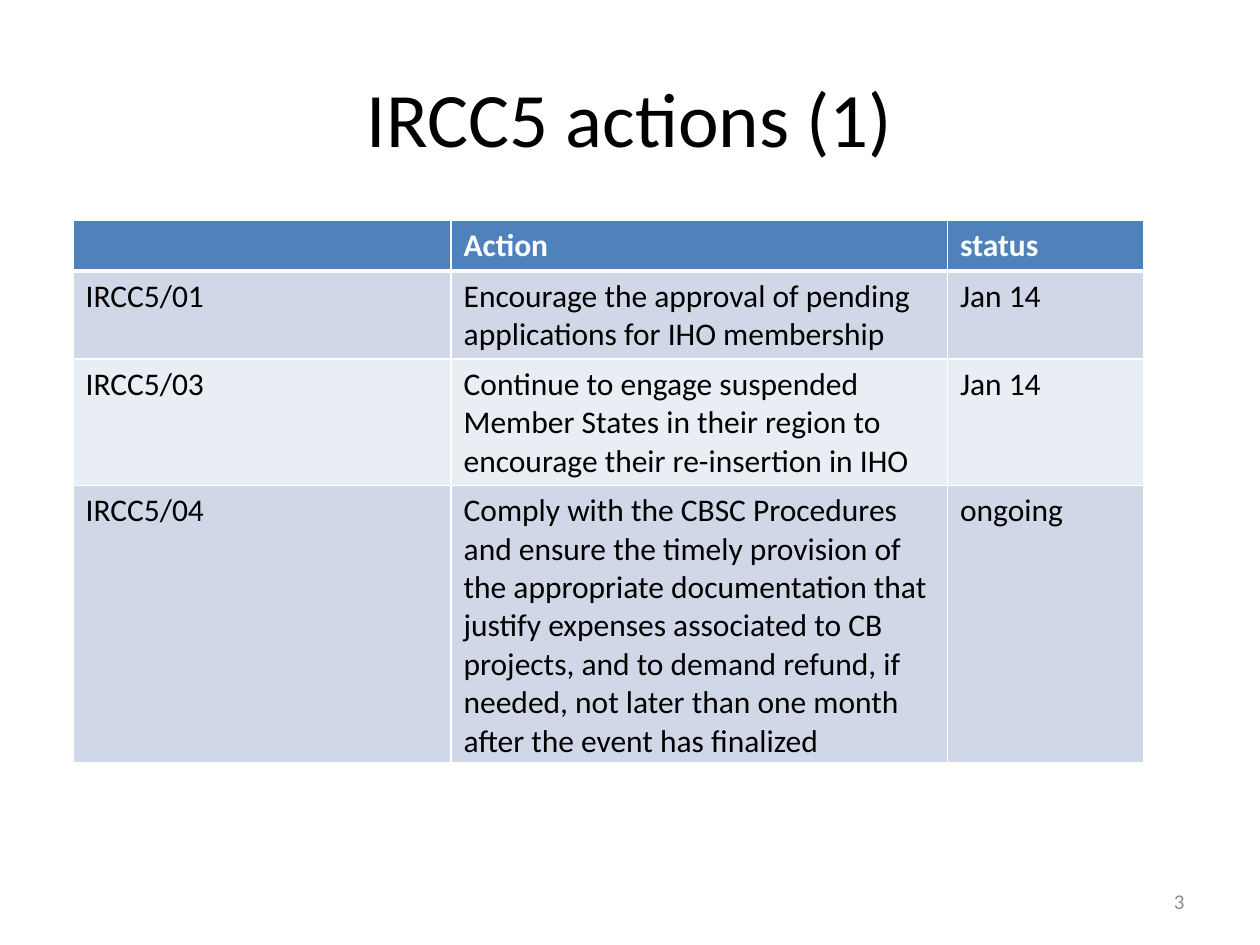
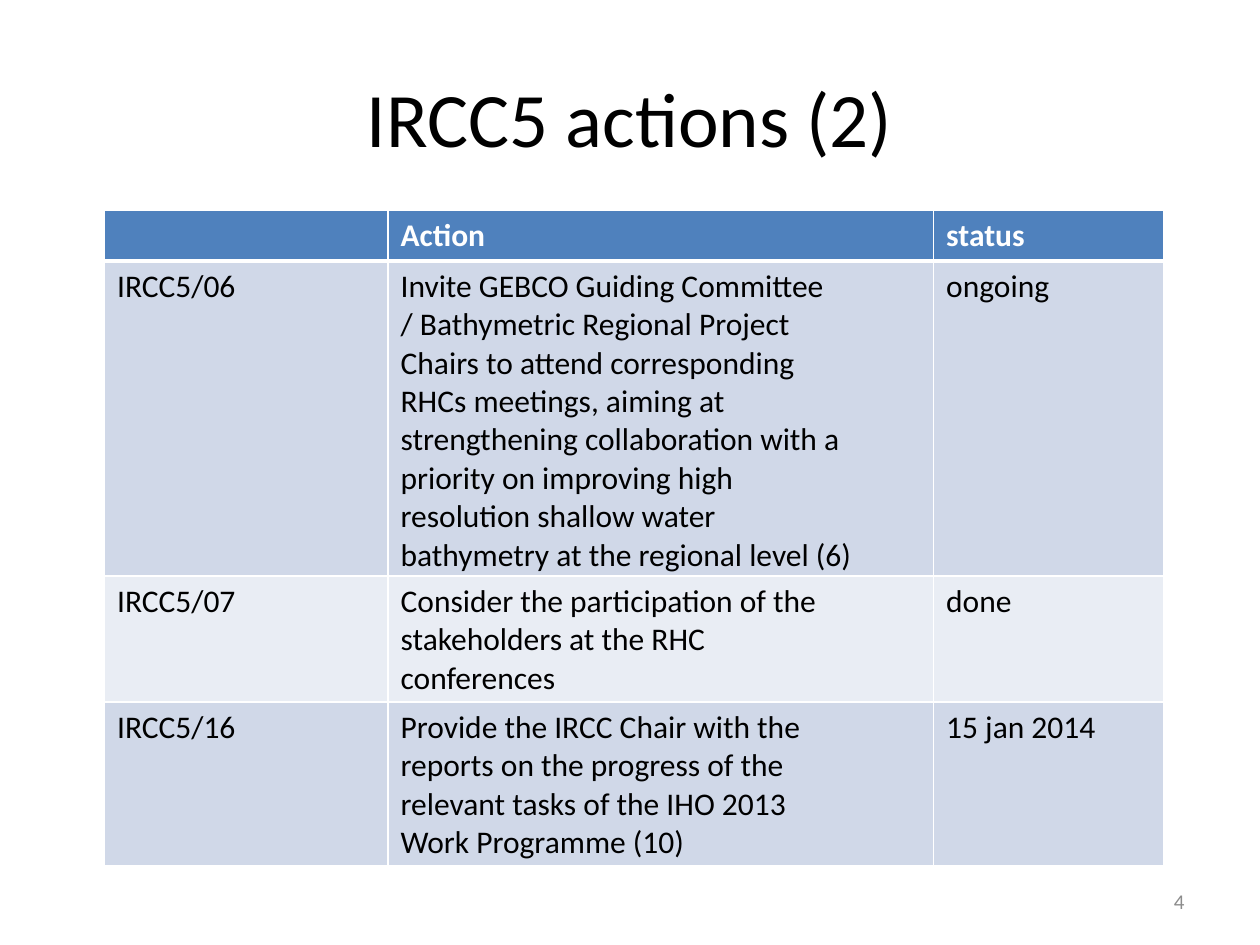
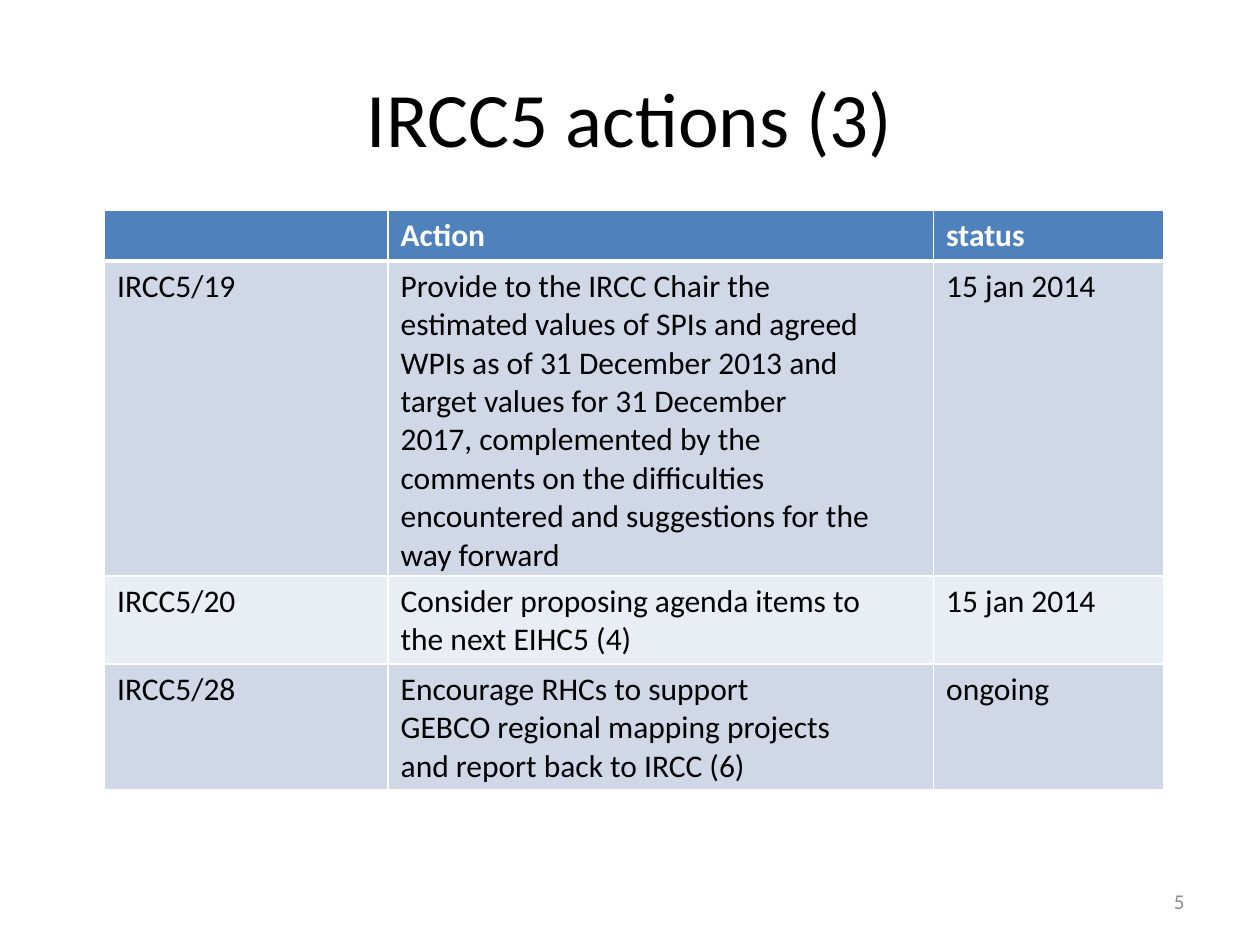
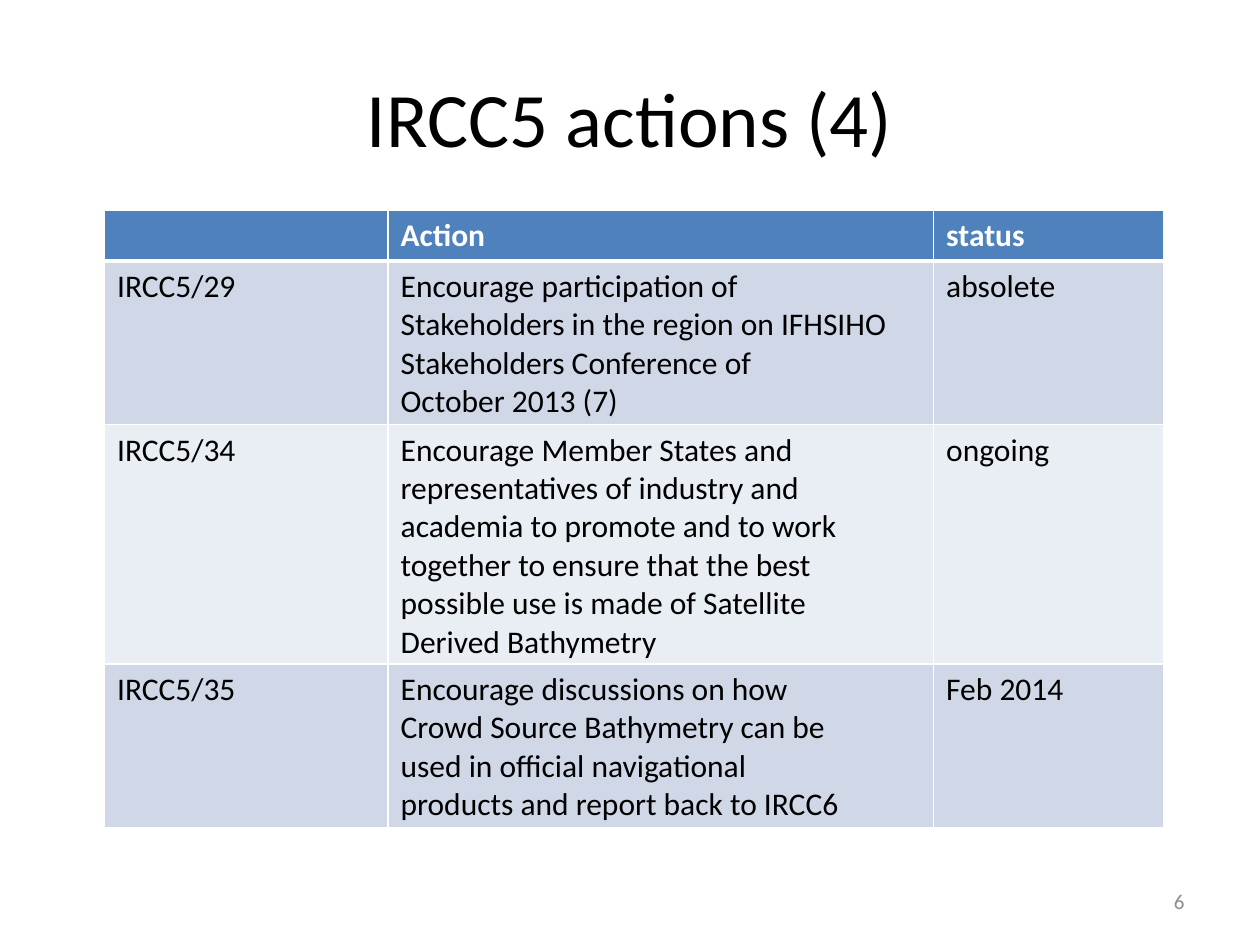
"""Build four slides that list the IRCC5 actions and their status."""
from lxml.etree import SubElement as Sub
from pptx import Presentation
from pptx.dml.color import RGBColor as RGB
from pptx.enum.text import MSO_ANCHOR as Anchor, PP_ALIGN as Align
from pptx.oxml.ns import qn
from pptx.util import Inches, Pt

FONT = "Calibri"
BLACK = RGB(0x00, 0x00, 0x00)
WHITE = RGB(0xFF, 0xFF, 0xFF)
GREY = RGB(0x8C, 0x8C, 0x8C)
BLUE = RGB(0x4F, 0x81, 0xBD)
BANDS = RGB(0xE9, 0xED, 0xF4), RGB(0xD0, 0xD8, 0xE8)

WIDE, HIGH = 10, 7.5
MARGIN = 0.05 * WIDE
PAD, LINE = 0.1, 0.3
FIRST = 3

HEAD = ("", "Action", "status")
NARROW = {"left": 0.58, "top": 1.75, "cols": (3, 3.94, 1.56)}
BROAD = {"left": 0.83, "top": 1.67, "cols": (2.25, 4.33, 1.83)}

PAGES = [
    (NARROW, [
        ("IRCC5/01", """Encourage the approval of pending
applications for IHO membership""", "Jan 14"),
        ("IRCC5/03", """Continue to engage suspended
Member States in their region to
encourage their re-insertion in IHO""", "Jan 14"),
        ("IRCC5/04", """Comply with the CBSC Procedures
and ensure the timely provision of
the appropriate documentation that
justify expenses associated to CB
projects, and to demand refund, if
needed, not later than one month
after the event has finalized""", "ongoing"),
    ]),
    (BROAD, [
        ("IRCC5/06", """Invite GEBCO Guiding Committee
/ Bathymetric Regional Project
Chairs to attend corresponding
RHCs meetings, aiming at
strengthening collaboration with a
priority on improving high
resolution shallow water
bathymetry at the regional level (6)""", "ongoing"),
        ("IRCC5/07", """Consider the participation of the
stakeholders at the RHC
conferences""", "done"),
        ("IRCC5/16", """Provide the IRCC Chair with the
reports on the progress of the
relevant tasks of the IHO 2013
Work Programme (10)""", "15 jan 2014"),
    ]),
    (BROAD, [
        ("IRCC5/19", """Provide to the IRCC Chair the
estimated values of SPIs and agreed
WPIs as of 31 December 2013 and
target values for 31 December
2017, complemented by the
comments on the difficulties
encountered and suggestions for the
way forward""", "15 jan 2014"),
        ("IRCC5/20", """Consider proposing agenda items to
the next EIHC5 (4)""", "15 jan 2014"),
        ("IRCC5/28", """Encourage RHCs to support
GEBCO regional mapping projects
and report back to IRCC (6)""", "ongoing"),
    ]),
    (BROAD, [
        ("IRCC5/29", """Encourage participation of
Stakeholders in the region on IFHSIHO
Stakeholders Conference of
October 2013 (7)""", "absolete"),
        ("IRCC5/34", """Encourage Member States and
representatives of industry and
academia to promote and to work
together to ensure that the best
possible use is made of Satellite
Derived Bathymetry""", "ongoing"),
        ("IRCC5/35", """Encourage discussions on how
Crowd Source Bathymetry can be
used in official navigational
products and report back to IRCC6""", "Feb 2014"),
    ]),
]


def write(frame, text, size=18, color=BLACK, bold=False, align=Align.LEFT):
    """Fill a text frame, one paragraph for each line."""
    frame.word_wrap = True
    frame.text = text
    for par in frame.paragraphs:
        par.alignment = align
        font = par.font
        for run in par.runs:
            font = run.font
            font.color.rgb = color
        font.name, font.size, font.bold = FONT, Pt(size), bold


def label(slide, text, left, top, width, height, **look):
    """Add a text box with its text in the middle."""
    box = slide.shapes.add_textbox(*map(Inches, (left, top, width, height)))
    box.text_frame.vertical_anchor = Anchor.MIDDLE
    write(box.text_frame, text, **look)


def edge(cell, **widths):
    """Draw white borders on a cell, widths in points."""
    props = cell._tc.get_or_add_tcPr()
    for side, width in widths.items():
        line = Sub(props, qn(f"a:ln{side}"), w=str(Pt(width)))
        Sub(Sub(line, qn("a:solidFill")), qn("a:srgbClr"), val=str(WHITE))


def grid(slide, rows, left, top, cols):
    """Add the table of actions, each row as high as its text."""
    rows = [HEAD, *rows]
    highs = [PAD + LINE * len(row[1].splitlines()) for row in rows]
    size = map(Inches, (left, top, sum(cols), sum(highs)))
    table = slide.shapes.add_table(len(rows), len(cols), *size).table
    for col, width in zip(table.columns, cols):
        col.width = Inches(width)
    for r, row in enumerate(rows):
        table.rows[r].height = Inches(highs[r])
        head = r == 0
        for c, text in enumerate(row):
            cell = table.cell(r, c)
            write(cell.text_frame, text, color=WHITE if head else BLACK, bold=head)
            edge(cell, L=1, R=1, T=3 if r == 1 else 1, B=3 if head else 1)
            cell.fill.solid()
            cell.fill.fore_color.rgb = BLUE if head else BANDS[r % 2]


def main():
    """Build and save the slides."""
    deck = Presentation()
    deck.slide_width, deck.slide_height = Inches(WIDE), Inches(HIGH)
    for i, (place, rows) in enumerate(PAGES):
        slide = deck.slides.add_slide(deck.slide_layouts[6])
        label(slide, f"IRCC5 actions ({i + 1})", MARGIN, 0.3,
              WIDE - 2 * MARGIN, 1.25, size=44, align=Align.CENTER)
        grid(slide, rows, **place)
        label(slide, str(FIRST + i), WIDE - MARGIN - 2.33, 6.95, 2.33, 0.4,
              size=12, color=GREY, align=Align.RIGHT)
    deck.save("out.pptx")


if __name__ == "__main__":
    main()
